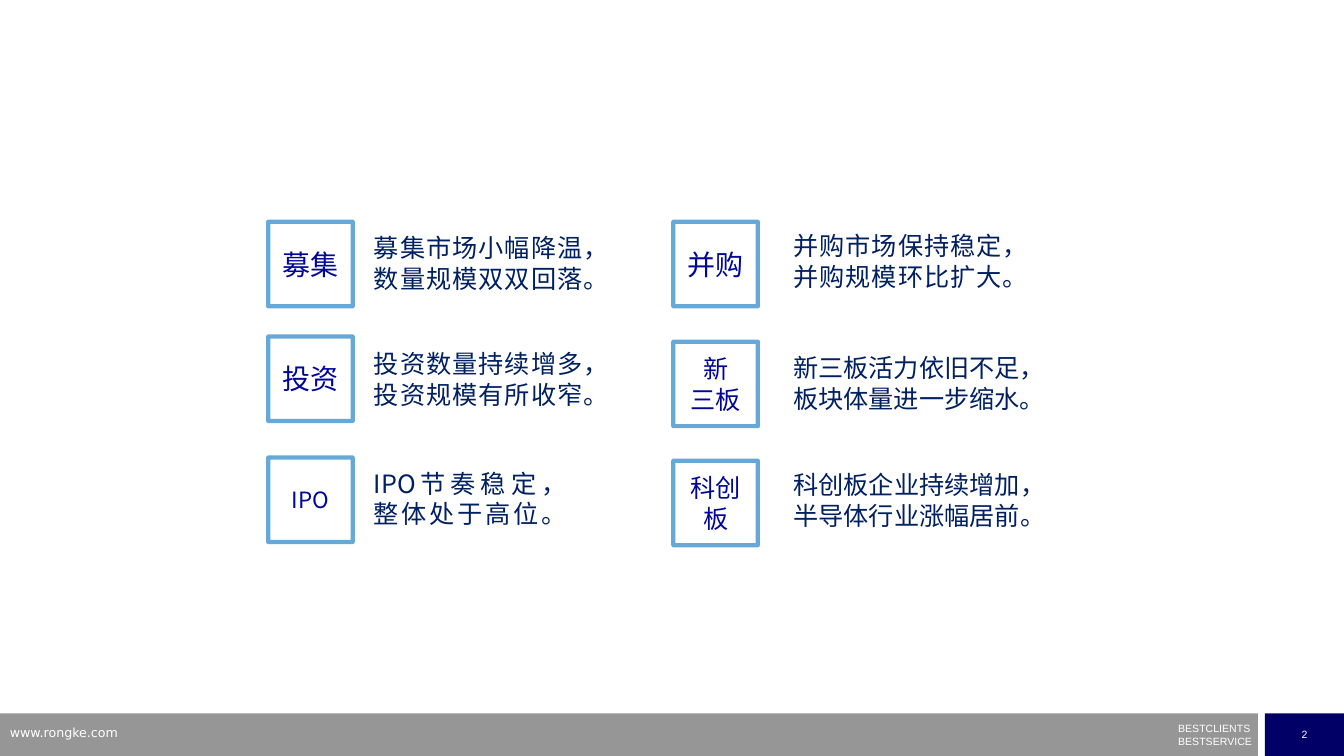
from lxml.etree import SubElement
from pptx import Presentation
from pptx.dml.color import RGBColor
from pptx.enum.lang import MSO_LANGUAGE_ID
from pptx.enum.shapes import MSO_SHAPE
from pptx.enum.text import MSO_ANCHOR, PP_ALIGN
from pptx.oxml.ns import qn
from pptx.util import Cm, Pt

LABEL_SIDE = 2.13
SUMMARY_HEIGHT = 1.8

# Per column: label left, summary left, then rows of
# (label, label size, label top, summary top, summary width, summary)
COLUMNS = [
    (6.76, 9.17, [
        ("募集", 20, 5.59, 5.74, 5.79, "募集市场小幅降温，\n数量规模双双回落。"),
        ("投资", 20, 8.48, 8.66, 5.79, "投资数量持续增多，\n投资规模有所收窄。"),
        ("IPO", 16, 11.53, 11.68, 4.72, "IPO节奏稳定，\n整体处于高位。"),
    ]),
    (16.97, 19.74, [
        ("并购", 20, 5.59, 5.69, 5.79, "并购市场保持稳定，\n并购规模环比扩大。"),
        ("新\n三板", 18, 8.61, 8.76, 6.88, "新三板活力依旧不足，\n板块体量进一步缩水。"),
        ("科创板", 18, 11.61, 11.71, 6.22, "科创板企业持续增加，\n半导体行业涨幅居前。"),
    ]),
]


def color(hex_string):
    return RGBColor.from_string(hex_string)


class SlideBuilder:
    navy = "000066"
    gray = "969696"
    white = "FFFFFF"
    label_blue = "000798"
    border_blue = "0070C0"
    summary_blue = "002060"
    label_font = "Noto Sans CJK JP"
    summary_font = "Noto Sans CJK SC"

    def __init__(self, slide):
        self.slide = slide

    def set_text(self, shape, text, size, font_name, font_color, alignment=PP_ALIGN.LEFT):
        shape.text_frame.text = text
        for paragraph in shape.text_frame.paragraphs:
            paragraph.alignment = alignment
            for run in paragraph.runs:
                run.font.size = Pt(size)
                run.font.name = font_name
                run.font.color.rgb = color(font_color)

    def set_chinese_text(self, shape, text, size, font_name, font_color, alignment):
        self.set_text(shape, text, size, font_name, font_color, alignment)
        for paragraph in shape.text_frame.paragraphs:
            paragraph.line_spacing = Pt(1.2 * size)
            paragraph._p.get_or_add_pPr().set("hangingPunct", "1")
            for run in paragraph.runs:
                run.font.language_id = MSO_LANGUAGE_ID.SIMPLIFIED_CHINESE
                east_asian = SubElement(run._r.get_or_add_rPr(), qn("a:ea"))
                east_asian.set("typeface", font_name)

    def rectangle(self, left, top, width, height, fill=None):
        shape = self.slide.shapes.add_shape(
            MSO_SHAPE.RECTANGLE, Cm(left), Cm(top), Cm(width), Cm(height))
        shape.shadow.inherit = False
        shape.line.fill.background()
        if fill:
            shape.fill.solid()
            shape.fill.fore_color.rgb = color(fill)
        else:
            shape.fill.background()
        shape.text_frame.vertical_anchor = MSO_ANCHOR.MIDDLE
        return shape

    def text_box(self, left, top, width, height):
        box = self.slide.shapes.add_textbox(Cm(left), Cm(top), Cm(width), Cm(height))
        box.text_frame.word_wrap = True
        return box

    def label(self, left, top, text, size):
        square = self.rectangle(left, top, LABEL_SIDE, LABEL_SIDE)
        square.line.color.rgb = color(self.border_blue)
        square.line.width = Pt(3)
        line_color = square.line._ln.find(".//" + qn("a:srgbClr"))
        SubElement(line_color, qn("a:alpha")).set("val", "60000")
        self.set_chinese_text(square, text, size, self.label_font,
                              self.label_blue, PP_ALIGN.CENTER)

    def summary(self, left, top, width, text):
        box = self.text_box(left, top, width, SUMMARY_HEIGHT)
        self.set_chinese_text(box, text, 18, self.summary_font,
                              self.summary_blue, PP_ALIGN.JUSTIFY)

    def footer(self):
        self.rectangle(0, 17.98, 31.7, 1.07, self.gray)
        number = self.rectangle(31.88, 17.98, 1.99, 1.07, self.navy)
        number.text_frame.word_wrap = False
        self.set_text(number, "2", 7.5, "Arial", self.white, PP_ALIGN.CENTER)

        motto = self.text_box(29.69, 18.34, 1.93, 0.51)
        frame = motto.text_frame
        frame.margin_left = frame.margin_right = 0
        frame.margin_top = frame.margin_bottom = 0
        self.set_text(motto, "BESTCLIENTS\nBESTSERVICE", 7.5, "Arial", self.white)
        for paragraph in frame.paragraphs:
            paragraph.line_spacing = 0.5
        frame.paragraphs[1].space_before = Pt(4.3)

        website = self.text_box(0, 18.14, 8.13, 0.66)
        self.set_text(website, "www.rongke.com", 9, "DejaVu Sans", self.white)


def main():
    presentation = Presentation()
    presentation.slide_width = Cm(33.87)
    presentation.slide_height = Cm(19.05)
    blank_layout = presentation.slide_layouts[6]
    builder = SlideBuilder(presentation.slides.add_slide(blank_layout))

    # Footer band
    builder.footer()

    # Market labels with their summaries
    for label_left, summary_left, rows in COLUMNS:
        for label, size, label_top, summary_top, width, summary in rows:
            builder.label(label_left, label_top, label, size)
            builder.summary(summary_left, summary_top, width, summary)

    presentation.save("out.pptx")


if __name__ == "__main__":
    main()
